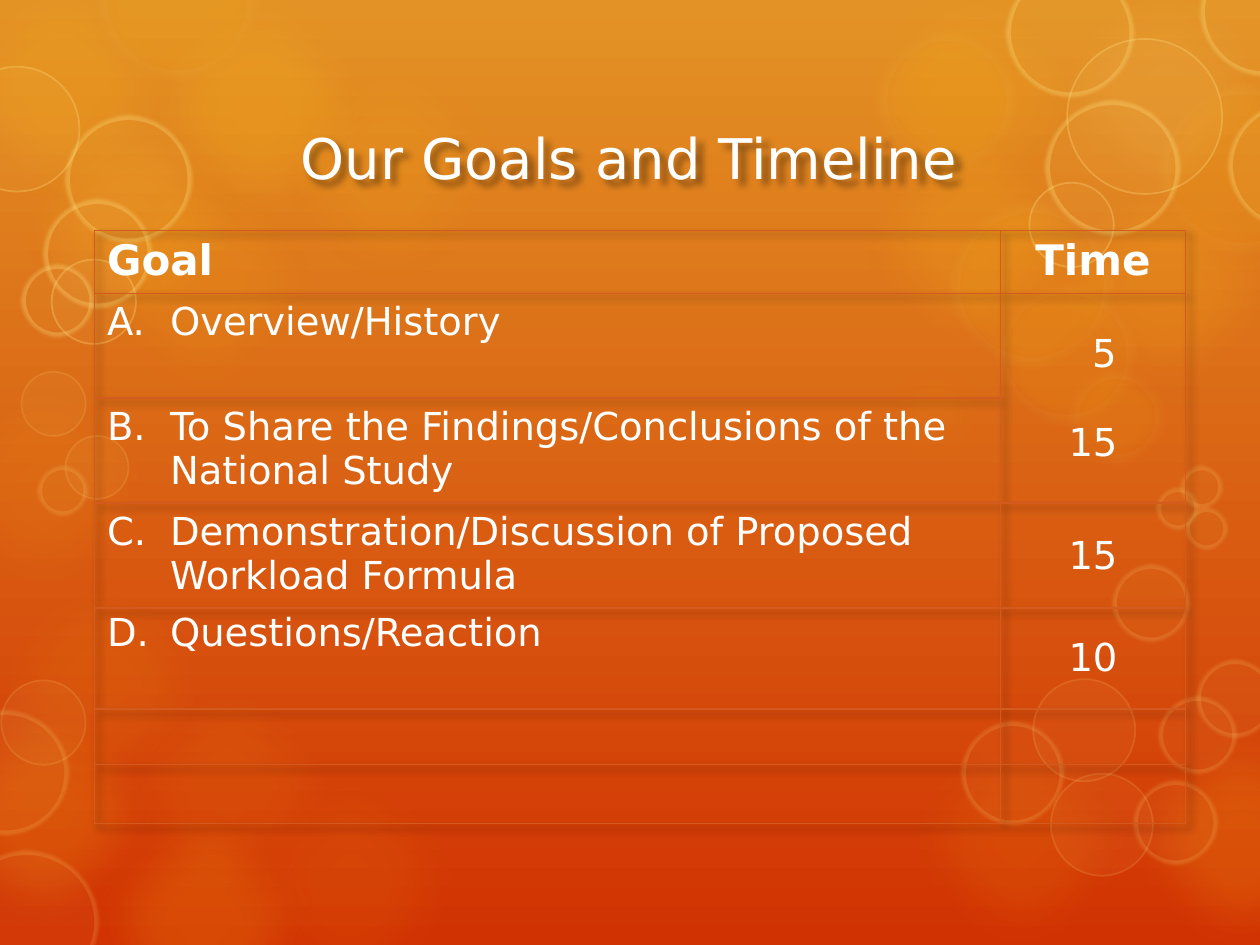
from lxml import etree
from pptx import Presentation
from pptx import util as u
from pptx.dml.color import RGBColor
from pptx.enum import shapes, text
from pptx.oxml import ns

FONT = "DejaVu Sans"
WHITE = "FFFFFF"
BORDER = "D35B1F"
GOLD, CREAM, PALE = "FDC61B", "FEEBAE", "FFE281"

# fill, fill opacity, line (colour, points, opacity) or None, soft edge in points,
# then left, top and diameter of each bubble
BUBBLES = [
    (GOLD, 8, None, 25, [(-0.25, 4.42, 2.09), (0.77, 5.24, 2.09),
                         (1.73, 5.96, 2.09), (-0.7, 2.82, 2.09)]),
    (GOLD, 10, None, 25, [(0.57, 1.2, 2.09), (2.05, 0.31, 2.09), (6.69, -0.3, 2.09),
                          (7.06, 5.62, 2.09), (6.75, 2.62, 1.33)]),
    (GOLD, 14, None, 25, [(-0.56, -0.32, 2.09)]),
    (GOLD, 15, None, 25, [(0, 0.72, 2.09), (8.2, 1.2, 2.09), (6.69, 0.86, 2.09)]),
    (GOLD, 16, None, 25, [(0.57, 6.27, 2.09), (8.81, 5.62, 2.09), (-0.69, 5.41, 2.09)]),
    (GOLD, 20, None, 25, [(1.01, -0.18, 2.09)]),
    (PALE, 10, None, 25, [(8.2, -0.32, 2.09)]),
    (GOLD, 10, (CREAM, 14, 6), 10, [
        (9.18, 0.65, 1.37), (6.94, 0.23, 1.14), (7.52, 1.59, 1.33), (7.89, 2.24, 1.14),
        (8.47, 2.91, 0.79), (0.75, -0.66, 1.31)]),
    (PALE, 5, (PALE, 5, 15), 2, [
        (-0.35, 6.75, 1.13), (-0.44, 5.64, 0.98), (7.63, 5.73, 0.81), (9, 6.2, 0.66),
        (8.83, 4.48, 0.61), (9.2, 5.53, 0.61), (9.5, 5.24, 0.61), (9.37, 3.7, 0.33),
        (9.18, 3.87, 0.33), (9.41, 4.03, 0.33), (0.3, 3.7, 0.39)]),
    (PALE, 5, (PALE, 5, 30), 2, [
        (0.52, 0.92, 1), (0.35, 1.59, 0.85), (0.17, 2.1, 0.57), (7.99, -0.24, 1),
        (9.53, -0.4, 1), (9.75, 0.82, 0.99), (8.3, 0.8, 1.06)]),
    (PALE, 5, (PALE, 1, 15), 0, [
        (0.01, 5.4, 0.67), (8.34, 6.14, 0.81), (8.2, 5.39, 0.81),
        (0.17, 2.95, 0.51), (0.52, 3.46, 0.5)]),
    (PALE, 5, (PALE, 1, 30), 0, [
        (-0.36, 0.53, 0.99), (0.41, 2.06, 0.67), (8.47, 0.31, 1.23), (8.17, 1.45, 0.67)]),
]

GOALS = [
    "Overview/History",
    "To Share the Findings/Conclusions of the National Study",
    "Demonstration/Discussion of Proposed Workload Formula",
    "Questions/Reaction",
]
COLUMN_WIDTHS = [7.19, 1.47]
ROW_HEIGHTS = [0.5, 0.83, 0.83, 0.83, 0.8, 0.44, 0.47]


def rgb(color):
    return RGBColor.from_string(color)


def add_xml(parent, tag, **attributes):
    return etree.SubElement(parent, ns.qn(tag), {k: str(v) for k, v in attributes.items()})


def set_paint(fill, color, opacity):
    fill.solid()
    fill.fore_color.rgb = rgb(color)
    choice = fill._xPr.find(ns.qn("a:solidFill"))[0]
    add_xml(choice, "a:alpha", val=opacity * 1000)


def add_drop_shadow(effects):
    shadow = add_xml(effects, "a:outerShdw", blurRad=u.Pt(4), dist=u.Pt(4),
                     dir=2700000, algn="tl", rotWithShape=0)
    add_xml(add_xml(shadow, "a:srgbClr", val="000000"), "a:alpha", val=40000)


def add_bubble(slide, left, top, size, color, opacity, line, softness):
    shape = slide.shapes.add_shape(
        shapes.MSO_SHAPE.OVAL, u.Inches(left), u.Inches(top), u.Inches(size), u.Inches(size))
    set_paint(shape.fill, color, opacity)
    if line:
        line_color, width, line_opacity = line
        shape.line.width = u.Pt(width)
        set_paint(shape.line.fill, line_color, line_opacity)
    else:
        shape.line.fill.background()
    shape.shadow.inherit = False
    if softness:
        effects = shape._element.spPr.find(ns.qn("a:effectLst"))
        add_xml(effects, "a:softEdge", rad=u.Pt(softness))


def set_background(slide):
    fill = slide.background.fill
    fill.gradient()
    fill.gradient_angle = 270
    for stop, color, position in zip(fill.gradient_stops, ("E39325", "D13202"), (0, 1)):
        stop.color.rgb = rgb(color)
        stop.position = position


def format_paragraph(paragraph, size, bold=False, centered=False):
    if centered:
        paragraph.alignment = text.PP_ALIGN.CENTER
    for run in paragraph.runs:
        run.font.name = FONT
        run.font.size = u.Pt(size)
        run.font.bold = bold
        run.font.color.rgb = rgb(WHITE)


def add_title(slide, title):
    box = slide.shapes.add_textbox(u.Inches(1.1), u.Inches(0.74), u.Inches(7.79), u.Inches(1.01))
    frame = box.text_frame
    frame.word_wrap = True
    frame.vertical_anchor = text.MSO_ANCHOR.MIDDLE
    frame.text = title
    format_paragraph(frame.paragraphs[0], 32, centered=True)
    add_drop_shadow(add_xml(box._element.spPr, "a:effectLst"))


def style_cell(cell):
    properties = cell._tc.get_or_add_tcPr()
    for side in ("a:lnL", "a:lnR", "a:lnT", "a:lnB"):
        line = add_xml(properties, side, w=u.Pt(1))
        add_xml(add_xml(line, "a:solidFill"), "a:srgbClr", val=BORDER)
    cell.fill.background()


def number_paragraph(paragraph, number):
    """Number the paragraph with a capital letter and a hanging indent."""
    properties = paragraph._p.get_or_add_pPr()
    properties.set("marL", str(u.Inches(0.5)))
    properties.set("indent", str(u.Inches(-0.5)))
    add_xml(properties, "a:buFont", typeface="+mj-lt")
    add_xml(properties, "a:buAutoNum", type="alphaUcPeriod", startAt=number)


def fill_time(cell, minutes):
    cell.vertical_anchor = text.MSO_ANCHOR.MIDDLE
    cell.text_frame.text = minutes
    for paragraph in cell.text_frame.paragraphs:
        format_paragraph(paragraph, 22, centered=True)


def add_timeline(slide):
    frame = slide.shapes.add_table(
        len(ROW_HEIGHTS), len(COLUMN_WIDTHS), u.Inches(0.75), u.Inches(1.83),
        u.Inches(sum(COLUMN_WIDTHS)), u.Inches(sum(ROW_HEIGHTS)))
    table = frame.table
    table.first_row = table.horz_banding = False
    effects = etree.Element(ns.qn("a:effectLst"))
    add_drop_shadow(effects)
    table._tbl.tblPr.insert(0, effects)
    for column, width in zip(table.columns, COLUMN_WIDTHS):
        column.width = u.Inches(width)
    for row, height in zip(table.rows, ROW_HEIGHTS):
        row.height = u.Inches(height)
    for cell in table.iter_cells():
        style_cell(cell)

    for column, heading in enumerate(("Goal", "Time")):
        cell = table.cell(0, column)
        cell.text_frame.text = heading
        format_paragraph(cell.text_frame.paragraphs[0], 24, bold=True, centered=column == 1)
    for number, goal in enumerate(GOALS, start=1):
        cell = table.cell(number, 0)
        cell.text_frame.text = goal
        paragraph = cell.text_frame.paragraphs[0]
        if number == len(GOALS):
            paragraph.line_spacing = 0.9
        format_paragraph(paragraph, 22)
        number_paragraph(paragraph, number)

    table.cell(1, 1).merge(table.cell(2, 1))
    for row, minutes in ((1, "5\n15"), (3, "15"), (4, "10")):
        fill_time(table.cell(row, 1), minutes)
    first, second = table.cell(1, 1).text_frame.paragraphs
    first._p.get_or_add_pPr().set("marL", str(u.Inches(0.18)))  # lines up the units digits
    second.space_before = u.Pt(25)


def main():
    presentation = Presentation()
    presentation.slide_width = u.Inches(10)
    presentation.slide_height = u.Inches(7.5)
    slide = presentation.slides.add_slide(presentation.slide_layouts[6])
    set_background(slide)
    for *style, circles in BUBBLES:
        for circle in circles:
            add_bubble(slide, *circle, *style)
    add_title(slide, "Our Goals and Timeline")
    add_timeline(slide)
    presentation.save("out.pptx")


if __name__ == "__main__":
    main()
